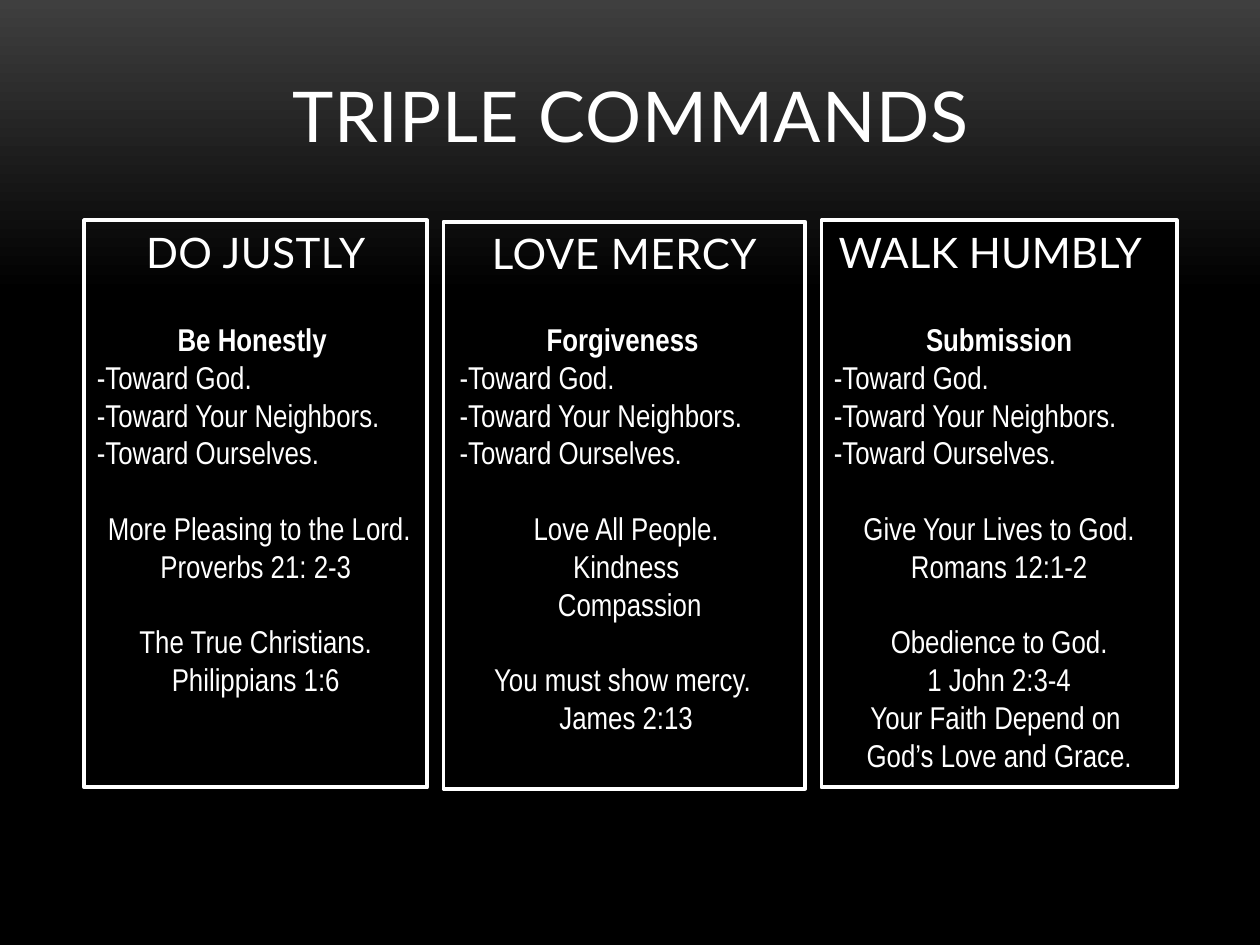
from pptx import Presentation
from pptx.dml.color import RGBColor
from pptx.enum.shapes import MSO_SHAPE as Shape
from pptx.enum.text import MSO_ANCHOR as Anchor, PP_ALIGN as Align
from pptx.util import Pt

COLORS = {"text": "FFFFFF", "glow": "3F3F3F", "base": "000000"}
HEAD_FONT, BODY_FONT = "Lato", "Arial Narrow"
LINE_GAP = 21.6  # one line of body text

TITLE = "TRIPLE COMMANDS"
TOWARD = ["-Toward God.", "-Toward Your Neighbors.", "-Toward Ourselves."]

# frame and body: left, width; groups are set apart by one line
COLUMNS = [
    {"heading": "DO JUSTLY", "topic": "Be Honestly ",
     "frame": (48.24, 195.84), "top": 126, "body": (48.24, 195.84),
     "groups": [[" More Pleasing to the Lord.", "Proverbs 21: 2-3"],
                ["The True Christians.", "Philippians 1:6"]]},
    {"heading": "LOVE MERCY", "topic": "Forgiveness ",
     "frame": (253.44, 206.64), "top": 126.72, "body": (255.6, 204.48),
     "groups": [["Love All People.", "Kindness", " Compassion"],
                ["You must show mercy. ", "James 2:13"]]},
    {"heading": "WALK HUMBLY", "topic": "Submission",
     "frame": (469.44, 203.04), "top": 126, "body": (469.44, 203.04),
     "fill": "base", "heading_box": (460.08, 211.68),
     "groups": [["Give Your Lives to God.", "Romans 12:1-2"],
                ["Obedience to God.", "1 John 2:3-4",
                 "Your Faith Depend on ", "God’s Love and Grace."]]},
]


def color(name):
    return RGBColor.from_string(COLORS[name])


def add_box(left, top, width, height):
    box = page.shapes.add_textbox(Pt(left), Pt(top), Pt(width), Pt(height))
    box.text_frame.word_wrap = True
    return box


def write(para, text, font, size, align=Align.CENTER, bold=False, spacing=0):
    span = para.add_run()
    span.text = text
    para.alignment = align
    para.font.name, para.font.size, para.font.bold = font, Pt(size), bold
    para.font.color.rgb = color("text")
    if spacing:
        span._r.get_or_add_rPr().set("spc", str(round(spacing * 100)))


deck = Presentation()
deck.slide_width, deck.slide_height = Pt(720), Pt(540)
page = deck.slides.add_slide(deck.slide_layouts[6])

# Background fading from grey to black
backdrop = page.background.fill
backdrop.gradient()
backdrop.gradient_angle = 270
for stop, name, position in zip(backdrop.gradient_stops, ("glow", "base"), (0, 0.31)):
    stop.color.rgb, stop.position = color(name), position

# Title
title = add_box(48.24, 21.6, 624.24, 71.28).text_frame
title.vertical_anchor = Anchor.BOTTOM
write(title.paragraphs[0], TITLE, HEAD_FONT, 40, spacing=0.5)

for column in COLUMNS:
    # Frame
    left, width = column["frame"]
    frame = page.shapes.add_shape(
        Shape.RECTANGLE, Pt(left), Pt(column["top"]), Pt(width), Pt(324))
    frame.shadow.inherit = False
    frame.line.color.rgb, frame.line.width = color("text"), Pt(2.25)
    if "fill" in column:
        frame.fill.solid()
        frame.fill.fore_color.rgb = color(column["fill"])
    else:
        frame.fill.background()

    # Heading, inside the frame unless it has a box of its own
    holder, spacing = frame, 0.3
    if "heading_box" in column:
        left, width = column["heading_box"]
        holder, spacing = add_box(left, column["top"], width, 36), 0
    holder.text_frame.vertical_anchor = Anchor.TOP
    write(holder.text_frame.paragraphs[0], column["heading"], HEAD_FONT, 24,
          spacing=spacing)

    # Body
    left, width = column["body"]
    body = add_box(left, 179.28, width, 247).text_frame
    write(body.paragraphs[0], column["topic"], BODY_FONT, 18, bold=True)
    for text in TOWARD:
        write(body.add_paragraph(), text, BODY_FONT, 18, Align.LEFT)
    for group in column["groups"]:
        for index, text in enumerate(group):
            para = body.add_paragraph()
            para.space_before = Pt(0 if index else LINE_GAP)
            write(para, text, BODY_FONT, 18)

deck.save("out.pptx")
